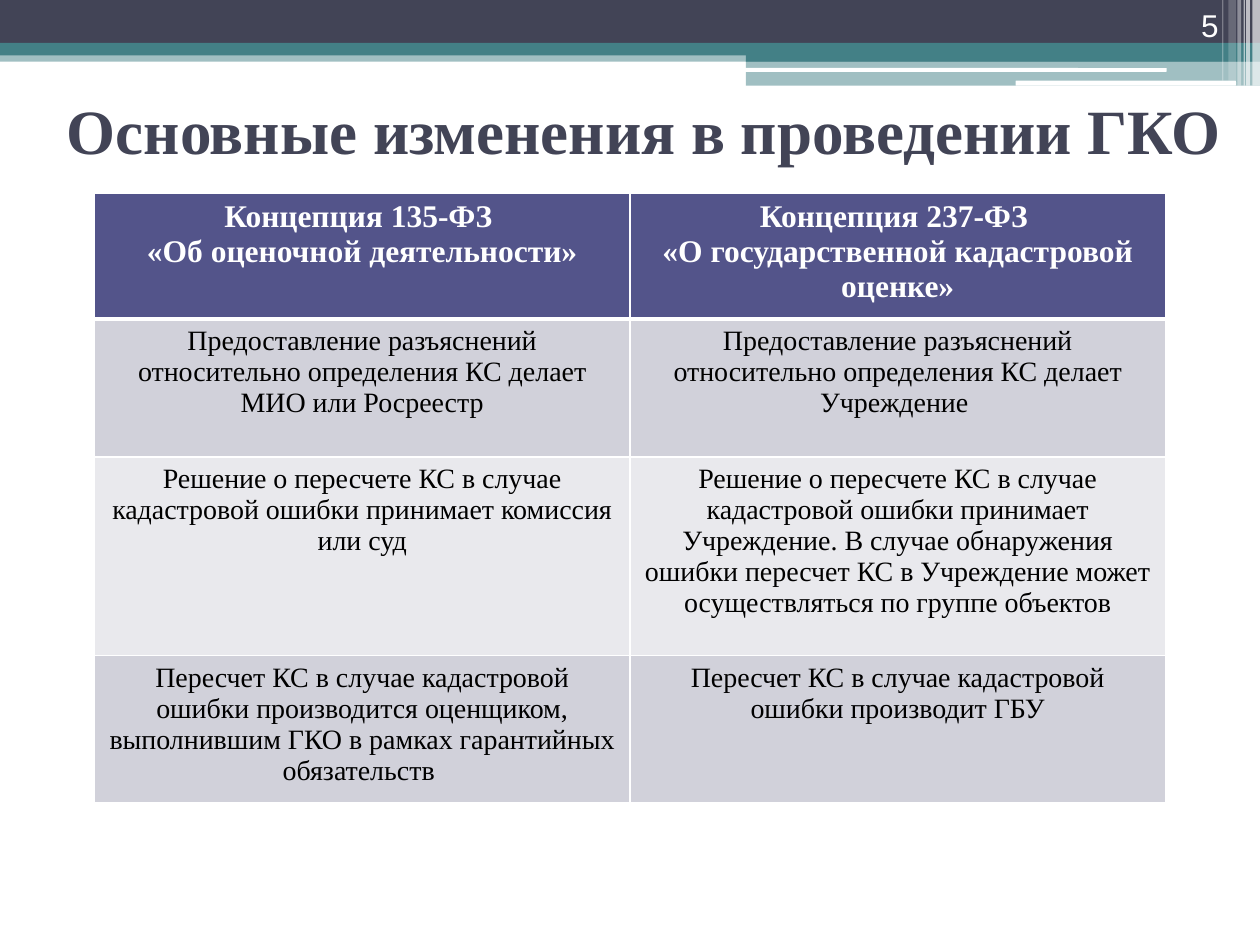
from lxml.etree import SubElement
from pptx import Presentation
from pptx.dml.color import RGBColor
from pptx.enum.shapes import MSO_SHAPE as SHAPE
from pptx.enum.text import MSO_ANCHOR as ANCHOR, MSO_AUTO_SIZE as AUTO, PP_ALIGN as ALIGN
from pptx.oxml.ns import qn
from pptx.util import Pt

WHITE = RGBColor(0xFF, 0xFF, 0xFF)
BLACK = RGBColor(0, 0, 0)
SLATE = RGBColor(0x42, 0x44, 0x56)
TEAL = RGBColor(0x43, 0x80, 0x86)
HEADER = RGBColor(0x53, 0x54, 0x8A)
ROW_FILLS = [RGBColor(0xD1, 0xD1, 0xDA), RGBColor(0xE9, 0xE9, 0xED)]
SERIF = "Times New Roman"

# Content
TITLE = "Основные изменения в проведении ГКО"
NUMBER = "5"
ROWS = [
    ("Концепция 135-ФЗ \n«Об оценочной деятельности»",
     "Концепция 237-ФЗ \n«О государственной кадастровой оценке»"),
    ("Предоставление разъяснений относительно определения КС делает МИО или Росреестр",
     "Предоставление разъяснений относительно определения КС делает Учреждение "),
    ("Решение о пересчете КС в случае кадастровой ошибки принимает комиссия или суд",
     "Решение о пересчете КС в случае кадастровой ошибки принимает Учреждение. "
     "В случае обнаружения ошибки пересчет КС в Учреждение может осуществляться "
     "по группе объектов"),
    ("Пересчет КС в случае кадастровой ошибки производится оценщиком, "
     "выполнившим ГКО в рамках гарантийных обязательств ",
     "Пересчет КС в случае кадастровой ошибки производит ГБУ"),
]
ROW_HEIGHTS = [66.3, 78.8, 113.7, 77.7]
COL_WIDTH = 306

# Header decoration: left, top, width, height, colour, opacity in percent
BANDS = [
    (0, 28.8, 720, 6.48, TEAL, 50),
    (0, 0, 720, 24.48, SLATE, 100),
    (0, 24.48, 720, 7.2, TEAL, 100),
    (426.24, 28.08, 293.76, 7.2, TEAL, 100),
    (426.24, 34.56, 293.76, 14.4, TEAL, 50),
]
ROUNDED = [
    (425.52, 38.88, 241.2, 2.16, WHITE, 100),
    (580.32, 46.08, 126, 2.88, WHITE, 100),
]
# Corner stripes: left, width, height, opacity
STRIPES = [(715.68, 4.32, 48.96, 65), (712.08, 2.16, 48.96, 65),
           (710.64, 0.72, 48.96, 60), (707.04, 2.16, 48.96, 40),
           (702, 4.32, 46.08, 20), (698.4, 0.72, 46.08, 30)]


def write(tf, text, size=16, font=SERIF, color=BLACK, bold=False,
          align=ALIGN.CENTER, anchor=ANCHOR.TOP):
    tf.word_wrap = True
    tf.vertical_anchor = anchor
    for i, line in enumerate(text.split("\n")):
        p = tf.paragraphs[0] if i == 0 else tf.add_paragraph()
        p.alignment = align
        r = p.add_run()
        r.text = line
        r.font.size, r.font.name, r.font.bold = Pt(size), font, bold
        r.font.color.rgb = color


def add_band(s, kind, left, top, width, height, color, opacity):
    sp = s.shapes.add_shape(kind, Pt(left), Pt(top), Pt(width), Pt(height))
    sp.shadow.inherit = False
    sp.line.fill.background()
    sp.fill.solid()
    sp.fill.fore_color.rgb = color
    if opacity < 100:
        clr = sp.fill._xPr.find(qn("a:solidFill"))[0]
        SubElement(clr, qn("a:alpha"), val=str(opacity * 1000))


def set_borders(cell, bottom):
    tcPr = cell._tc.get_or_add_tcPr()
    for i, (side, width) in enumerate([("L", 1), ("R", 1), ("T", 1), ("B", bottom)]):
        ln = tcPr.makeelement(qn("a:ln" + side), {"w": str(Pt(width))})
        fill = SubElement(ln, qn("a:solidFill"))
        SubElement(fill, qn("a:srgbClr"), val=str(WHITE))
        tcPr.insert(i, ln)


def main():
    prs = Presentation()
    prs.slide_width, prs.slide_height = Pt(720), Pt(540)
    s = prs.slides.add_slide(prs.slide_layouts[5])

    # Header decoration
    for band in BANDS:
        add_band(s, SHAPE.RECTANGLE, *band)
    for band in ROUNDED:
        add_band(s, SHAPE.ROUNDED_RECTANGLE, *band)
    for left, width, height, opacity in STRIPES:
        add_band(s, SHAPE.RECTANGLE, left, 0, width, height, WHITE, opacity)

    # Title and slide number
    title = s.shapes.title
    title.left, title.top, title.width, title.height = Pt(31), Pt(31.7), Pt(676), Pt(84.2)
    title.text_frame.auto_size = AUTO.NONE
    write(title.text_frame, TITLE, size=36, color=SLATE, bold=True,
          align=ALIGN.LEFT, anchor=ANCHOR.MIDDLE)
    number = s.shapes.add_textbox(Pt(643.7), Pt(0), Pt(59.8), Pt(28.8))
    write(number.text_frame, NUMBER, size=18, font="Arial", color=WHITE,
          align=ALIGN.RIGHT, anchor=ANCHOR.BOTTOM)

    # Comparison table
    table = s.shapes.add_table(len(ROWS), 2, Pt(54), Pt(110.2),
                               Pt(2 * COL_WIDTH), Pt(sum(ROW_HEIGHTS))).table
    for col in table.columns:
        col.width = Pt(COL_WIDTH)
    for i, (texts, height) in enumerate(zip(ROWS, ROW_HEIGHTS)):
        table.rows[i].height = Pt(height)
        head = i == 0
        for j, text in enumerate(texts):
            cell = table.cell(i, j)
            cell.fill.solid()
            cell.fill.fore_color.rgb = HEADER if head else ROW_FILLS[(i - 1) % 2]
            set_borders(cell, bottom=3 if head else 1)
            write(cell.text_frame, text, size=18 if head else 16,
                  color=WHITE if head else BLACK, bold=head)

    prs.save("out.pptx")


if __name__ == "__main__":
    main()
